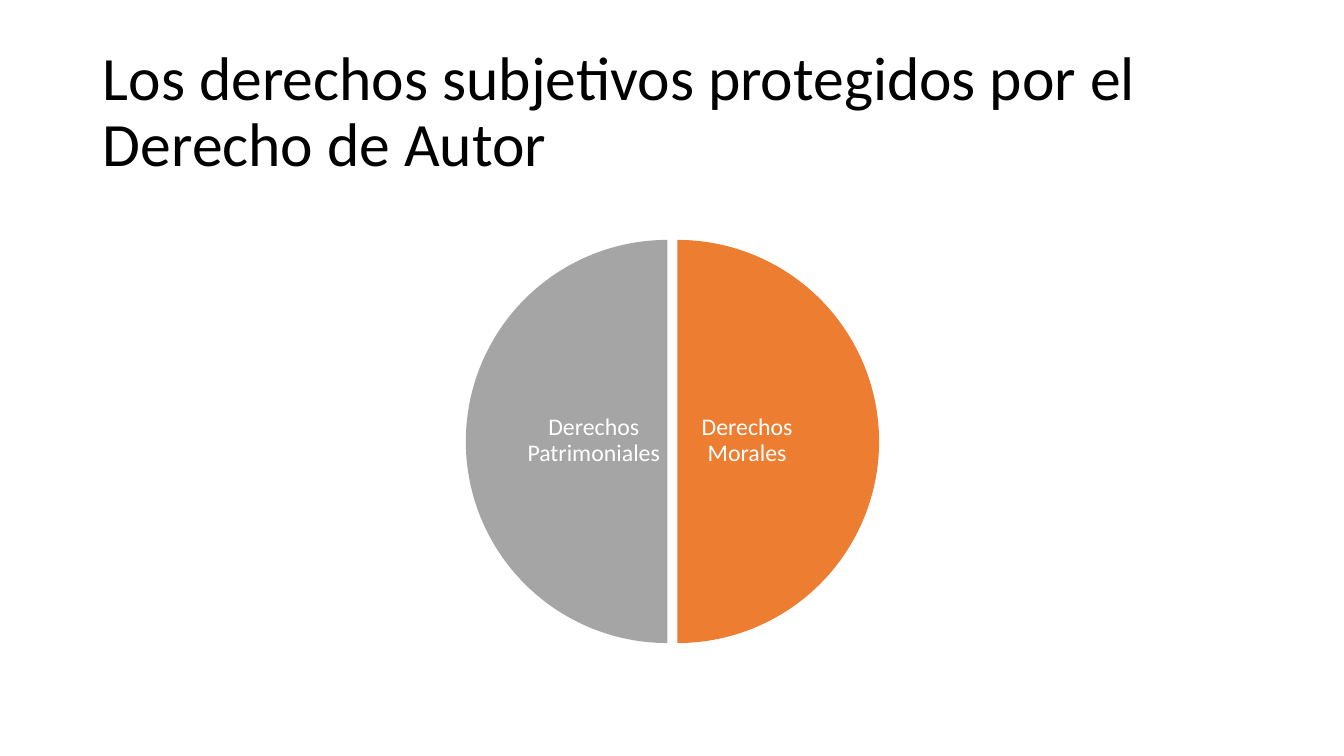
from dataclasses import dataclass

from pptx import Presentation
from pptx.dml.color import RGBColor as Rgb
from pptx.enum.shapes import MSO_SHAPE as Kind
from pptx.enum.text import MSO_ANCHOR as Anchor, MSO_AUTO_SIZE as Fit, PP_ALIGN as Align
from pptx.shapes.base import BaseShape
from pptx.shapes.group import GroupShape
from pptx.util import Inches, Pt

WIDE, HIGH = Inches(13.33), Inches(7.5)
FONT = "Calibri"
HUES = {"ink": "000000", "paper": "FFFFFF", "moral": "ED7D31", "money": "A5A5A5"}
PIE_TOP, PIE_WIDE, PIE_HIGH = 31.73, 30, 53.33
TAG_TOP, TAG_WIDE, TAG_HIGH = 39.6, 10.5, 37.47


@dataclass
class Half:
    label: str
    hue: str
    left: float
    tag_left: float
    start: int
    end: int


HALVES = [
    Half("Derechos Morales", "moral", 35.41, 50.34, 270, 90),
    Half("Derechos Patrimoniales", "money", 34.66, 38.93, 90, 270),
]


def area(left: float, top: float, wide: float, high: float) -> tuple[int, ...]:
    shares = ((left, WIDE), (top, HIGH), (wide, WIDE), (high, HIGH))
    return tuple(round(full * part / 100) for part, full in shares)


def write(box: BaseShape, text: str, *, size: int, hue: str, align: Align,
          inset: tuple[float, float] = (0.1, 0.05), after: int = 0) -> None:
    frame = box.text_frame
    frame.text = text
    frame.word_wrap = True
    frame.auto_size = Fit.NONE
    frame.vertical_anchor = Anchor.MIDDLE
    frame.margin_left = frame.margin_right = Inches(inset[0])
    frame.margin_top = frame.margin_bottom = Inches(inset[1])
    para = frame.paragraphs[0]
    para.alignment = align
    para.line_spacing = 0.9
    para.space_after = Pt(after)
    font = para.runs[0].font
    font.name, font.size = FONT, Pt(size)
    font.color.rgb = Rgb.from_string(HUES[hue])


def draw(group: GroupShape, half: Half) -> None:
    pie = group.shapes.add_shape(Kind.PIE, *area(half.left, PIE_TOP, PIE_WIDE, PIE_HIGH))
    pie.adjustments[0] = half.start * 0.6
    pie.adjustments[1] = half.end * 0.6
    pie.shadow.inherit = False
    pie.fill.solid()
    pie.fill.fore_color.rgb = Rgb.from_string(HUES[half.hue])
    pie.line.fill.background()
    tag = group.shapes.add_textbox(*area(half.tag_left, TAG_TOP, TAG_WIDE, TAG_HIGH))
    write(tag, half.label, size=17, hue="paper", align=Align.CENTER,
          inset=(0.02, 0.02), after=6)


def main() -> None:
    deck = Presentation()
    deck.slide_width, deck.slide_height = WIDE, HIGH
    slide = deck.slides.add_slide(deck.slide_layouts[5])
    title = slide.shapes.title
    title.left, title.top, title.width, title.height = area(6.9, 5.33, 86.27, 19.33)
    write(title, "Los derechos subjetivos protegidos por el Derecho de Autor",
          size=44, hue="ink", align=Align.LEFT)
    group = slide.shapes.add_group_shape()
    for half in HALVES:
        draw(group, half)
    deck.save("out.pptx")


if __name__ == "__main__":
    main()
